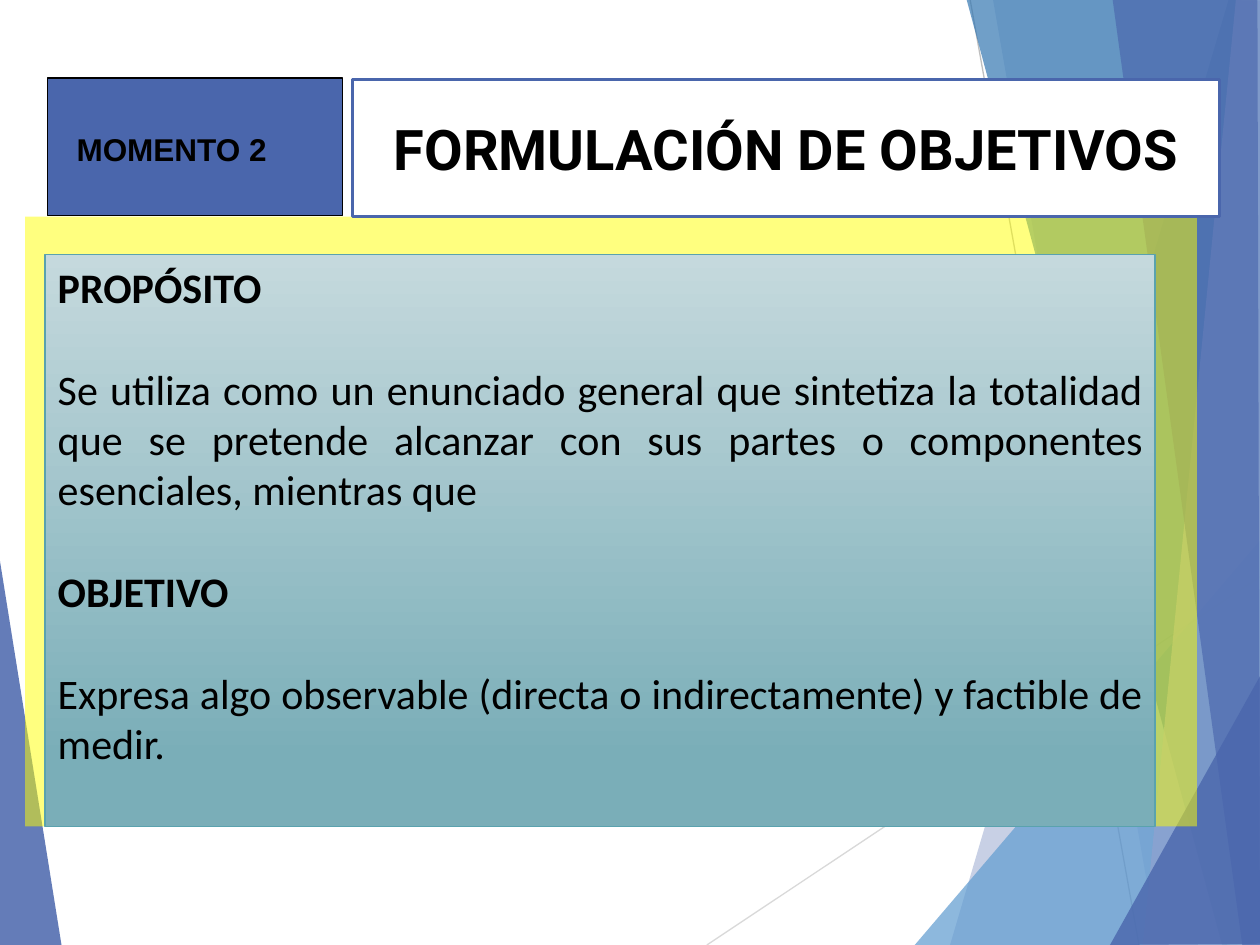
from dataclasses import dataclass
from typing import Optional

from lxml import etree
from pptx import Presentation
from pptx.dml.color import RGBColor
from pptx.enum.shapes import MSO_CONNECTOR as CONN, MSO_SHAPE as SHAPE
from pptx.enum.text import MSO_ANCHOR as ANCHOR, PP_ALIGN as ALIGN
from pptx.oxml.ns import qn
from pptx.util import Pt

PX = 9144
W, H = 1000, 750
BLUE, BLACK, WHITE = "4A66AC", "000000", "FFFFFF"


@dataclass(frozen=True)
class Facet:
    points: tuple[tuple[int, int], ...]
    color: str
    alpha: int


@dataclass(frozen=True)
class Ray:
    start: tuple[int, int]
    end: tuple[int, int]
    color: str


@dataclass(frozen=True)
class Panel:
    box: tuple[int, int, int, int]
    fill: Optional[str] = None
    alpha: int = 100
    line: Optional[str] = None
    weight: float = 0.75


LEFT_FACET = Facet(((-1, 439), (49, 751), (-1, 750)), BLUE, 85)
RAYS = (
    Ray((561, 750), (1001, 457), "D9D9D9"),
    Ray((770, 0), (904, 750), "BFBFBF"),
)
RIGHT_FACETS = (
    Facet(((975, 0), (754, 750), (1002, 751), (1001, 1)), BLUE, 30),
    Facet(((788, -1), (919, 750), (1001, 750), (1001, -1)), BLUE, 20),
    Facet(((726, 750), (1000, 429), (1001, 750)), "629DD1", 72),
    Facet(((767, -1), (970, 750), (1001, 749), (1001, -1)), "3477B2", 70),
    Facet(((981, -1), (907, 750), (1001, 750), (1000, -1)), "90A2CF", 70),
    Facet(((883, -1), (986, 750), (1000, 750), (998, -1)), BLUE, 65),
    Facet(((881, 750), (1001, 535), (1001, 749)), BLUE, 80),
)
MOMENT = Panel((38, 62, 234, 109), BLUE, line=BLACK)
BACKDROP = Panel((20, 172, 930, 484), "FFFF00", alpha=50)
TITLE = Panel((280, 63, 688, 109), WHITE, line=BLUE, weight=1.5)
CONTENT = Panel((36, 202, 881, 454), line="5AA2AE", weight=1)
SECTIONS = (
    ("PROPÓSITO", True),
    ("Se utiliza como un enunciado general que sintetiza la totalidad que se "
     "pretende alcanzar con sus partes o componentes esenciales, mientras que", False),
    ("OBJETIVO", True),
    ("Expresa algo observable (directa o indirectamente) y factible de medir.", False),
)


def rgb(color: str) -> RGBColor:
    return RGBColor.from_string(color)


def paint(sp, color: str, alpha: int = 100) -> None:
    sp.fill.solid()
    sp.fill.fore_color.rgb = rgb(color)
    if alpha < 100:
        clr = sp._element.spPr.find(qn("a:solidFill"))[0]
        etree.SubElement(clr, qn("a:alpha")).set("val", str(alpha * 1000))


def draw_facet(s, facet: Facet) -> None:
    first, *rest = facet.points
    fb = s.shapes.build_freeform(*first, scale=PX)
    fb.add_line_segments(rest, close=True)
    sp = fb.convert_to_shape()
    sp.shadow.inherit = False
    paint(sp, facet.color, facet.alpha)
    sp.line.fill.background()


def draw_ray(s, ray: Ray) -> None:
    ends = (v * PX for v in ray.start + ray.end)
    cx = s.shapes.add_connector(CONN.STRAIGHT, *ends)
    cx.line.color.rgb = rgb(ray.color)
    cx.line.width = Pt(0.75)
    etree.SubElement(cx._element.spPr, qn("a:effectLst"))


def draw_panel(s, panel: Panel):
    sp = s.shapes.add_shape(SHAPE.RECTANGLE, *(v * PX for v in panel.box))
    sp.shadow.inherit = False
    if panel.fill:
        paint(sp, panel.fill, panel.alpha)
    if panel.line:
        sp.line.color.rgb = rgb(panel.line)
        sp.line.width = Pt(panel.weight)
    else:
        sp.line.fill.background()
    return sp


def shade(sp, *stops: tuple[float, str]) -> None:
    sp.fill.gradient()
    sp.fill.gradient_angle = 270
    for stop, (position, color) in zip(sp.fill.gradient_stops, stops):
        stop.position = position
        stop.color.rgb = rgb(color)


def write(p, text: str, *, size: int, font: str, bold: bool = True,
          align=ALIGN.LEFT, before: float = 0) -> None:
    p.alignment = align
    p.space_before = Pt(before)
    r = p.add_run()
    r.text = text
    r.font.size = Pt(size)
    r.font.name = font
    r.font.bold = bold
    r.font.color.rgb = rgb(BLACK)


def main() -> None:
    prs = Presentation()
    prs.slide_width, prs.slide_height = W * PX, H * PX
    s = prs.slides.add_slide(prs.slide_layouts[6])

    draw_facet(s, LEFT_FACET)
    for ray in RAYS:
        draw_ray(s, ray)
    for facet in RIGHT_FACETS:
        draw_facet(s, facet)

    draw_panel(s, MOMENT)
    draw_panel(s, BACKDROP)

    tf = draw_panel(s, TITLE).text_frame
    tf.vertical_anchor = ANCHOR.MIDDLE
    write(tf.paragraphs[0], "FORMULACIÓN DE OBJETIVOS", size=32, font="Roboto",
          align=ALIGN.CENTER)

    label = s.shapes.add_textbox(51 * PX, 98 * PX, 230 * PX, 51 * PX)
    label.text_frame.word_wrap = True
    write(label.text_frame.paragraphs[0], "MOMENTO 2", size=18, font="Arial")

    content = draw_panel(s, CONTENT)
    shade(content, (0, "C5D9DD"), (0.88, "7AAEB8"))
    tf = content.text_frame
    tf.word_wrap = True
    tf.vertical_anchor = ANCHOR.MIDDLE
    tf.margin_bottom = 46 * PX
    for i, (text, bold) in enumerate(SECTIONS):
        p = tf.add_paragraph() if i else tf.paragraphs[0]
        write(p, text, size=24, font="Calibri", bold=bold, align=ALIGN.JUSTIFY,
              before=29.3 if i else 0)

    prs.save("out.pptx")


if __name__ == "__main__":
    main()
